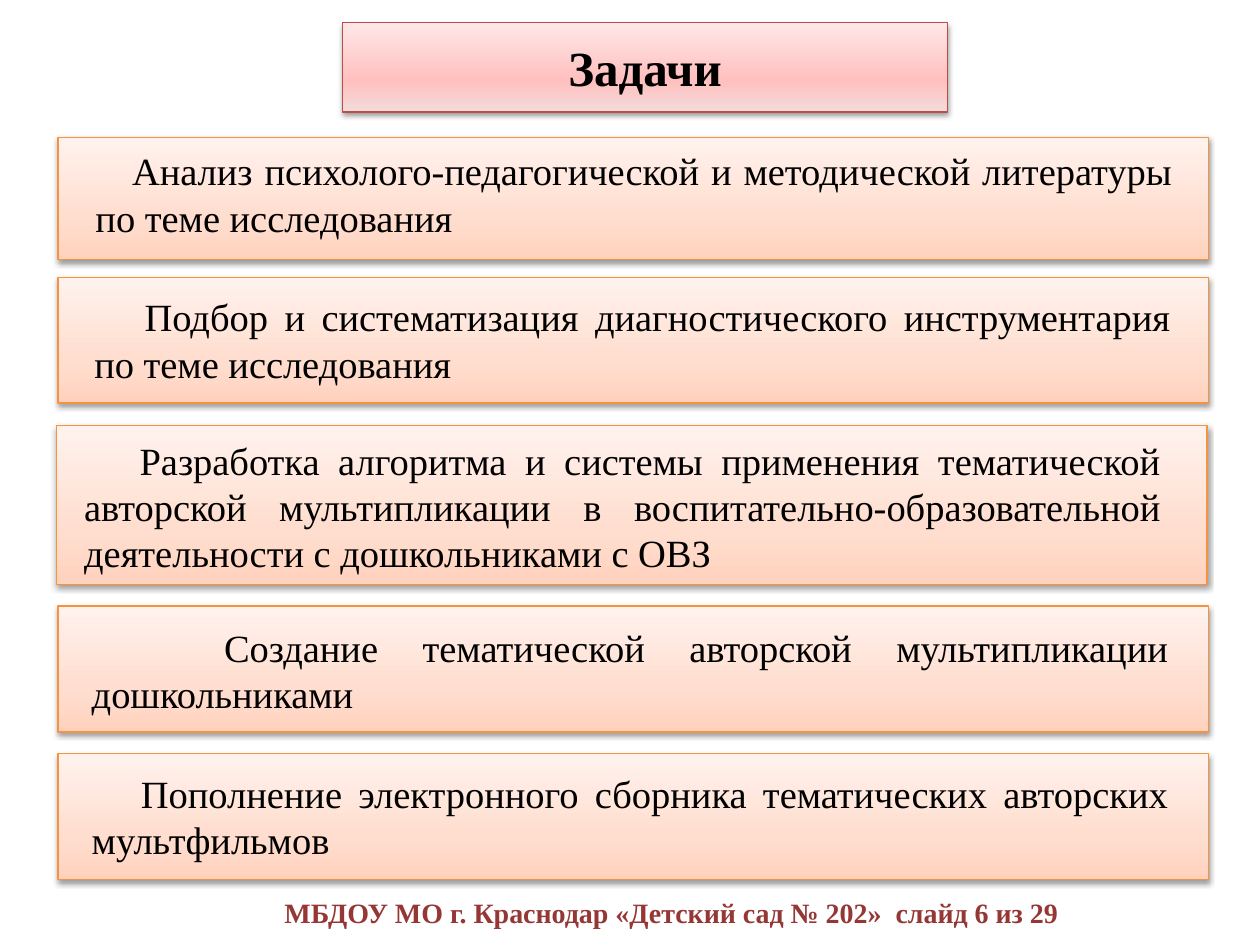
from dataclasses import dataclass

from lxml.etree import SubElement
from pptx import Presentation
from pptx.dml.color import RGBColor
from pptx.enum.shapes import MSO_SHAPE
from pptx.enum.text import MSO_ANCHOR, MSO_AUTO_SIZE, PP_ALIGN
from pptx.oxml.ns import qn
from pptx.util import Inches, Pt


@dataclass(frozen=True)
class Theme:
    font: str = "Times New Roman"
    ink: str = "000000"
    footer_ink: str = "953735"
    title_line: str = "BF4C48"
    task_line: str = "F69240"
    # Gradients run from bottom to top: (percent, colour)
    title_fill: tuple = ((0, "F2DCDB"), (35, "FFC0BF"), (100, "FFE7E7"))
    task_fill: tuple = ((0, "FFD2BD"), (35, "FFDED0"), (100, "FFF2ED"))
    title_size: int = 28
    task_size: int = 22
    footer_size: int = 16


THEME = Theme()

PANEL_LEFT, PANEL_WIDTH, TEXT_WIDTH = 0.46, 9.13, 8.74

# Panel offset, top and height; text offset inside the panel; first-line indent; wording
TASKS = [
    (0, 1.09, 0.97, 0.2, 0.03, 0.29,
     "Анализ психолого-педагогической и методической литературы по теме исследования"),
    (0, 2.2, 1, 0.19, 0.08, 0.4,
     "Подбор и систематизация диагностического инструментария по теме исследования"),
    (-0.01, 3.38, 1.26, 0.12, 0.04, 0.44,
     "Разработка алгоритма и системы применения тематической авторской "
     "мультипликации в воспитательно-образовательной деятельности с дошкольниками с ОВЗ"),
    (0, 4.81, 1, 0.17, 0.09, 1.05,
     "Создание тематической авторской мультипликации дошкольниками"),
    (0, 5.98, 1, 0.17, 0.08, 0.39,
     "Пополнение электронного сборника тематических авторских мультфильмов"),
]


def style_panel(shape, stops, line_color):
    """Vertical gradient, thin outline and a soft shadow below."""
    shape.fill.gradient()
    shape.fill.gradient_angle = 90
    properties = shape._element.spPr
    stop_list = properties.find(qn("a:gradFill")).find(qn("a:gsLst"))
    for old_stop in list(stop_list):
        stop_list.remove(old_stop)
    for percent, color in stops:
        stop = SubElement(stop_list, qn("a:gs"), pos=str(percent * 1000))
        SubElement(stop, qn("a:srgbClr"), val=color)

    shape.line.color.rgb = RGBColor.from_string(line_color)
    shape.line.width = Pt(0.75)

    shape.shadow.inherit = False
    shadow = SubElement(properties.find(qn("a:effectLst")), qn("a:outerShdw"),
                        blurRad=str(Pt(3.1)), dist=str(Pt(1.6)),
                        dir="5400000", rotWithShape="0")
    color = SubElement(shadow, qn("a:srgbClr"), val="000000")
    SubElement(color, qn("a:alpha"), val="38000")


def write(para, text, size, color, bold=False):
    span = para.add_run()
    span.text = text
    span.font.name = THEME.font
    span.font.size = Pt(size)
    span.font.bold = bold
    span.font.color.rgb = RGBColor.from_string(color)


def add_title(page, left, top, width, height):
    title = page.shapes.title
    title.left, title.top = Inches(left), Inches(top)
    title.width, title.height = Inches(width), Inches(height)
    style_panel(title, THEME.title_fill, THEME.title_line)
    frame = title.text_frame
    frame.auto_size = MSO_AUTO_SIZE.NONE
    frame.vertical_anchor = MSO_ANCHOR.MIDDLE
    para = frame.paragraphs[0]
    para.alignment = PP_ALIGN.CENTER
    write(para, "Задачи", THEME.title_size, THEME.ink, bold=True)


def add_task(page, left, top, width, height, text_dx, text_dy, indent, text):
    panel = page.shapes.add_shape(MSO_SHAPE.RECTANGLE, Inches(left), Inches(top),
                                  Inches(width), Inches(height))
    style_panel(panel, THEME.task_fill, THEME.task_line)

    box = page.shapes.add_textbox(Inches(left + text_dx), Inches(top + text_dy),
                                  Inches(TEXT_WIDTH), Inches(height - 2 * text_dy))
    box.text_frame.word_wrap = True
    box.text_frame.auto_size = MSO_AUTO_SIZE.SHAPE_TO_FIT_TEXT
    para = box.text_frame.paragraphs[0]
    para.alignment = PP_ALIGN.JUSTIFY
    para._p.get_or_add_pPr().set("indent", str(Inches(indent)))
    write(para, text, THEME.task_size, THEME.ink)


def add_footer(page, left, top, width, height):
    box = page.shapes.add_textbox(Inches(left), Inches(top), Inches(width), Inches(height))
    box.text_frame.word_wrap = False
    box.text_frame.auto_size = MSO_AUTO_SIZE.SHAPE_TO_FIT_TEXT
    write(box.text_frame.paragraphs[0],
          "МБДОУ МО г. Краснодар «Детский сад № 202»  слайд 6 из 29",
          THEME.footer_size, THEME.footer_ink, bold=True)


def main():
    deck = Presentation()
    deck.slide_width, deck.slide_height = Inches(10), Inches(7.5)
    page = deck.slides.add_slide(deck.slide_layouts[5])

    # Heading
    add_title(page, 2.72, 0.18, 4.8, 0.71)

    # Task panels
    for shift, top, height, *content in TASKS:
        add_task(page, PANEL_LEFT + shift, top, PANEL_WIDTH, height, *content)

    # Footer
    add_footer(page, 2.16, 7.06, 6.43, 0.37)

    deck.save("out.pptx")


if __name__ == "__main__":
    main()
